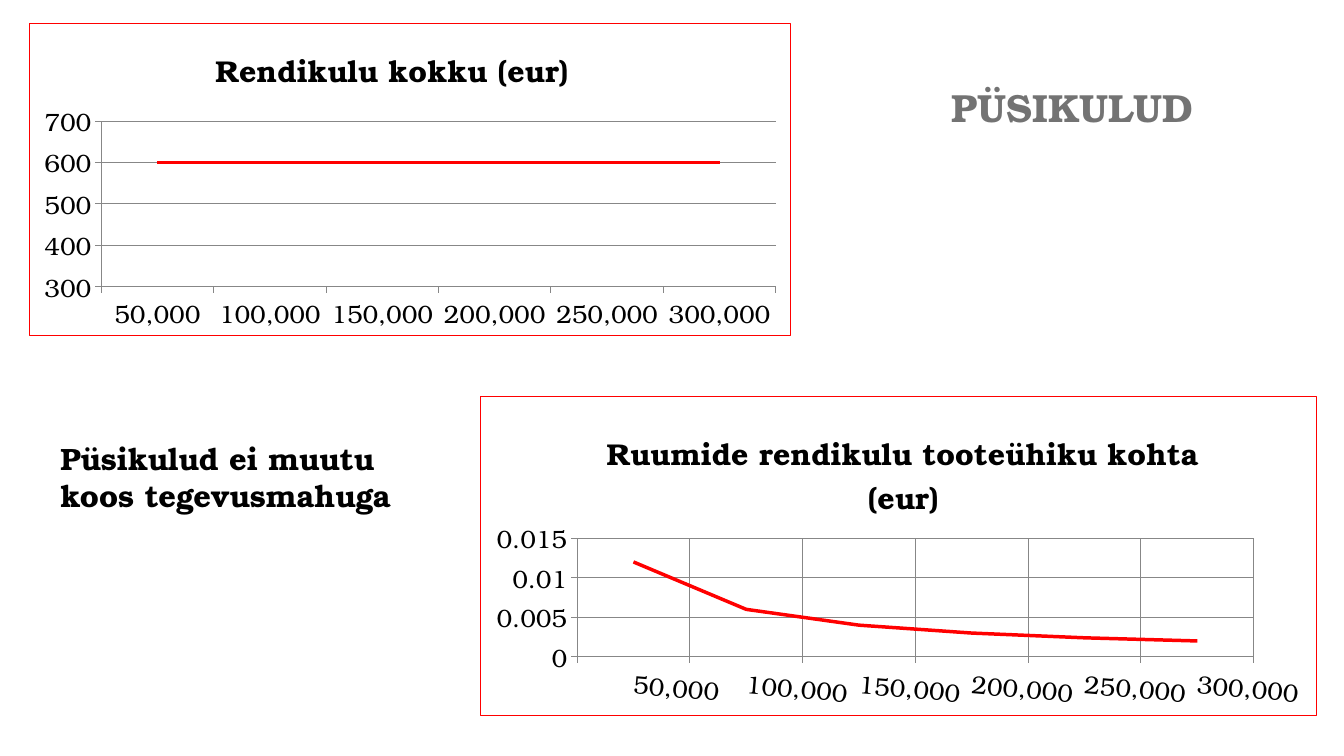
from dataclasses import dataclass

from lxml.etree import SubElement
from pptx import Presentation
from pptx.chart.chart import Chart
from pptx.chart.data import CategoryChartData
from pptx.dml.color import RGBColor
from pptx.dml.line import LineFormat
from pptx.enum.chart import XL_CHART_TYPE, XL_TICK_MARK
from pptx.enum.text import MSO_ANCHOR, MSO_AUTO_SIZE, PP_ALIGN
from pptx.oxml import parse_xml
from pptx.oxml.ns import nsdecls, qn
from pptx.util import Emu, Pt

PX = 9144  # 100 px to the inch
FONT = "TeX Gyre Bonum"
BLACK, GRAY, RED, GRID = "000000", "737373", "FF0000", "878787"
CATEGORIES = [f"{n:,}" for n in range(50000, 300001, 50000)]

Box = tuple[int, int, int, int]


@dataclass
class LineChart:
    title: str
    series: str
    values: list[float]
    box: Box
    plot: Box
    title_at: tuple[int, int]
    minimum: float
    maximum: float
    step: float
    category_grid: bool = False
    label_angle: int = 0


CHARTS = [
    LineChart("Rendikulu kokku (eur) ", "Series 1", [600] * 6,
              (29, 23, 756, 310), (100, 120, 670, 165), (208, 38),
              300, 700, 100),
    LineChart("Ruumide rendikulu tooteühiku kohta (eur)",
              "Ruumide rendikulu tooteühiku kohta (eur)",
              [0.012, 0.006, 0.004, 0.003, 0.0024, 0.002],
              (476, 393, 830, 317), (572, 534, 672, 118), (596, 418),
              0, 0.015, 0.005, category_grid=True, label_angle=5),
]


def px(*lengths: int) -> list[Emu]:
    return [Emu(n * PX) for n in lengths]


def rgb(color: str) -> RGBColor:
    return RGBColor.from_string(color)


def set_font(font, size: float, color: str = BLACK, bold: bool = False) -> None:
    for name, value in {"name": FONT, "size": Pt(size), "bold": bold}.items():
        setattr(font, name, value)
    font.color.rgb = rgb(color)


def set_line(line: LineFormat, color: str, width: float) -> None:
    line.color.rgb = rgb(color)
    line.width = Pt(width)


def set_text(sp, text: str, size: float, color: str, align: PP_ALIGN) -> None:
    tf = sp.text_frame
    formats = {"word_wrap": True, "auto_size": MSO_AUTO_SIZE.NONE,
               "vertical_anchor": MSO_ANCHOR.TOP}
    for name, value in formats.items():
        setattr(tf, name, value)
    p = tf.paragraphs[0]
    p.alignment = align
    r = p.add_run()
    r.text = text
    set_font(r.font, size, color, bold=True)


def set_layout(parent, after, **values) -> None:
    """Place a chart part by hand, replacing any automatic layout."""
    for old in parent.findall(qn("c:layout")):
        parent.remove(old)
    layout = parse_xml(f"<c:layout {nsdecls('c')}><c:manualLayout/></c:layout>")
    for name, value in values.items():
        SubElement(layout[0], qn(f"c:{name}")).set("val", str(value))
    if after is None:
        parent.insert(0, layout)
    else:
        after.addnext(layout)


def add_border(chart: Chart) -> None:
    chart_space = chart.element
    chart_space.find(qn("c:chart")).addnext(parse_xml(
        f"<c:spPr {nsdecls('c', 'a')}><a:noFill/><a:ln w='9525'><a:solidFill>"
        f"<a:srgbClr val='{RED}'/></a:solidFill></a:ln></c:spPr>"))


def add_line_chart(s, spec: LineChart) -> None:
    data = CategoryChartData()
    data.categories = CATEGORIES
    data.add_series(spec.series, spec.values)
    chart = s.shapes.add_chart(XL_CHART_TYPE.LINE, *px(*spec.box), data).chart
    chart.has_legend = False
    set_font(chart.font, 18)
    add_border(chart)

    # Title
    tf = chart.chart_title.text_frame
    r = tf.paragraphs[0].add_run()
    r.text = spec.title
    set_font(r.font, 21.6, bold=True)
    chart.chart_title.include_in_layout = False

    # Positions as shares of the chart
    left, top, width, height = spec.box
    x, y, w, h = spec.plot
    title_x, title_y = spec.title_at
    title = chart.chart_title._element
    set_layout(title, title.find(qn("c:tx")), xMode="edge", yMode="edge",
               x=(title_x - left) / width, y=(title_y - top) / height)
    plot_area = chart.element.find(qn("c:chart")).find(qn("c:plotArea"))
    set_layout(plot_area, None, layoutTarget="inner", xMode="edge", yMode="edge",
               x=(x - left) / width, y=(y - top) / height,
               w=w / width, h=h / height)

    # Axes
    value_axis, category_axis = chart.value_axis, chart.category_axis
    scale = {"minimum_scale": spec.minimum, "maximum_scale": spec.maximum,
             "major_unit": spec.step}
    for name, value in scale.items():
        setattr(value_axis, name, value)
    for axis, grid in ((value_axis, True), (category_axis, spec.category_grid)):
        axis.major_tick_mark = XL_TICK_MARK.OUTSIDE
        axis.minor_tick_mark = XL_TICK_MARK.NONE
        axis.has_major_gridlines = grid
        set_font(axis.tick_labels.font, 18)
        set_line(axis.format.line, GRID, 0.75)
        if grid:
            set_line(axis.major_gridlines.format.line, GRID, 0.75)
    body = category_axis._element.find(qn("c:txPr")).find(qn("a:bodyPr"))
    body.set("rot", str(spec.label_angle * 60000))

    # Series
    chart.plots[0].vary_by_categories = False
    series = chart.plots[0].series[0]
    series.smooth = False
    set_line(series.format.line, RED, 2.5)


def main() -> None:
    prs = Presentation()
    prs.slide_width, prs.slide_height = px(1333, 750)
    s = prs.slides.add_slide(prs.slide_layouts[5])

    # Heading
    title = s.shapes.title
    title.left, title.top, title.width, title.height = px(930, 78, 267, 57)
    set_text(title, "PÜSIKULUD", 28, GRAY, PP_ALIGN.CENTER)

    # Explanation
    note = s.shapes.add_textbox(*px(50, 431, 400, 84))
    set_text(note, "Püsikulud ei muutu koos tegevusmahuga", 22, BLACK,
             PP_ALIGN.LEFT)

    # Charts
    for spec in CHARTS:
        add_line_chart(s, spec)

    prs.save("out.pptx")


if __name__ == "__main__":
    main()
